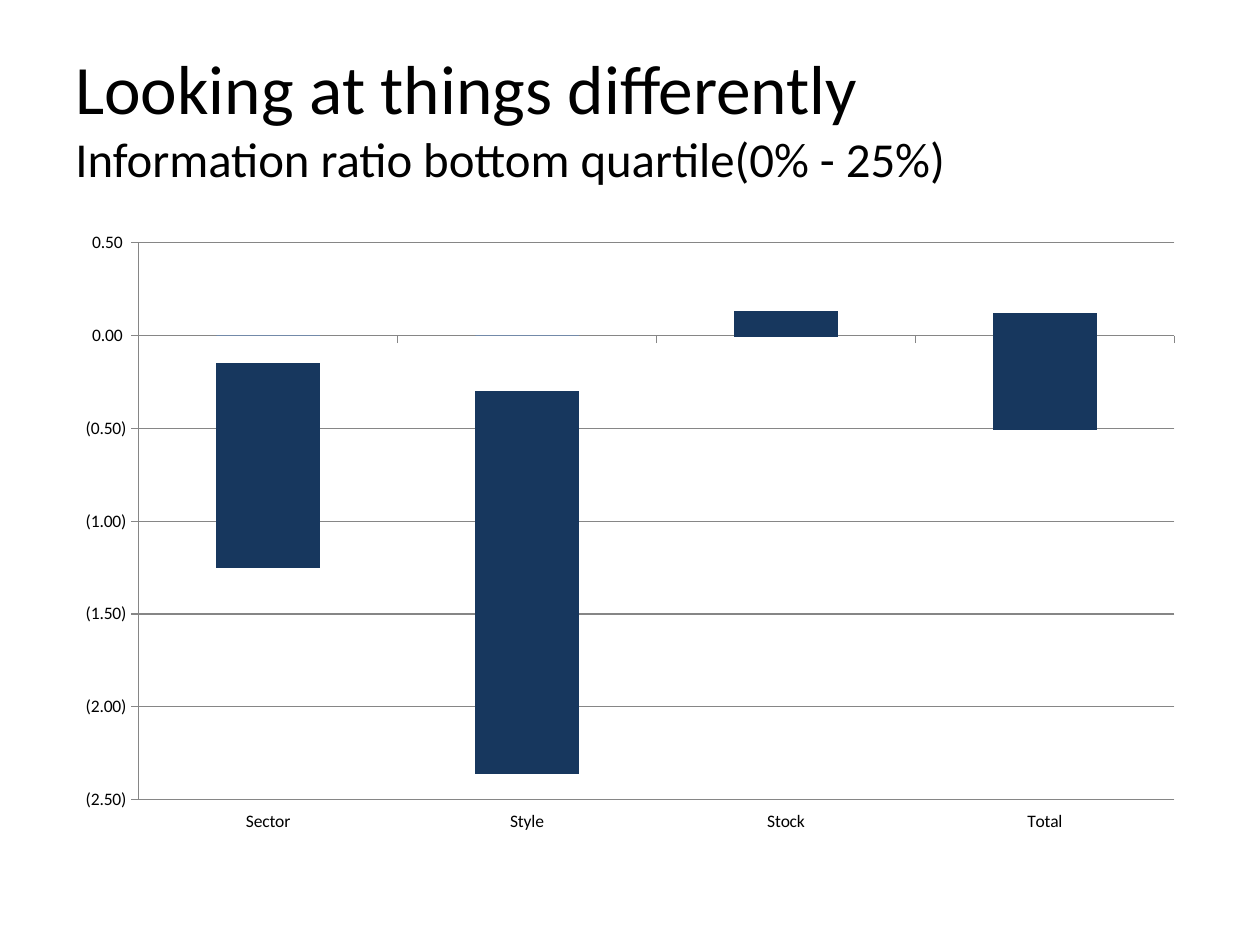
"""Build a slide with a floating column chart of information ratios."""
from dataclasses import dataclass
from typing import Optional

from pptx import Presentation
from pptx.chart.data import CategoryChartData
from pptx.dml.color import RGBColor
from pptx.enum.chart import XL_CHART_TYPE, XL_TICK_LABEL_POSITION, XL_TICK_MARK
from pptx.enum.text import MSO_ANCHOR
from pptx.util import Pt

STACKED = XL_CHART_TYPE.COLUMN_STACKED
LOW = XL_TICK_LABEL_POSITION.LOW
OUTSIDE = XL_TICK_MARK.OUTSIDE
MIDDLE = MSO_ANCHOR.MIDDLE


@dataclass(frozen=True)
class Theme:
    font: str = "Calibri"
    ink: str = "000000"
    rule: str = "868686"
    navy: str = "17375E"
    blue: str = "558ED5"
    light: str = "8EB4E3"
    pale: str = "C6D9F1"
    head: float = 39.6
    sub: float = 27.9
    label: float = 10
    line: float = 0.75


@dataclass(frozen=True)
class Band:
    color: Optional[str]
    vals: tuple = (0, 0, 0, 0)


THEME = Theme()
CATS = ("Sector", "Style", "Stock", "Total")
BANDS = (
    Band(None),
    Band(THEME.navy),
    Band(THEME.blue),
    Band(THEME.light),
    Band(THEME.navy, (0, 0, 0.13, 0.12)),
    Band(None, (-0.15, -0.3, 0, 0)),
    Band(THEME.pale),
    Band(THEME.light),
    Band(THEME.blue),
    Band(THEME.navy, (-1.1, -2.06, -0.01, -0.51)),
)


def style(font, size: float) -> None:
    font.name = THEME.font
    font.size = Pt(size)
    font.color.rgb = RGBColor.from_string(THEME.ink)


def rule(line) -> None:
    line.color.rgb = RGBColor.from_string(THEME.rule)
    line.width = Pt(THEME.line)


def add_title(slide, head: str, sub: str) -> None:
    box = slide.shapes.add_textbox(Pt(36), Pt(21.6), Pt(648), Pt(90))
    frame = box.text_frame
    frame.word_wrap = True
    frame.vertical_anchor = MIDDLE
    frame.text = f"{head}\v{sub}"
    for run, size in zip(frame.paragraphs[0].runs, (THEME.head, THEME.sub)):
        style(run.font, size)


def add_bars(slide, bands: tuple) -> None:
    data = CategoryChartData()
    data.categories = CATS
    for num, band in enumerate(bands, 1):
        data.add_series(f"Series {num}", band.vals)
    chart = slide.shapes.add_chart(
        STACKED, Pt(36), Pt(126), Pt(648), Pt(356.4), data).chart
    chart.has_legend = False
    chart.has_title = False
    style(chart.font, THEME.label)

    plot = chart.plots[0]
    plot.gap_width = 150
    plot.overlap = 100
    plot.vary_by_categories = False
    for series, band in zip(plot.series, bands):
        series.invert_if_negative = False
        fill = series.format.fill
        if band.color is None:
            fill.background()
        else:
            fill.solid()
            fill.fore_color.rgb = RGBColor.from_string(band.color)

    for axis in (chart.category_axis, chart.value_axis):
        axis.major_tick_mark = OUTSIDE
        rule(axis.format.line)
    chart.category_axis.tick_label_position = LOW

    scale = chart.value_axis
    scale.minimum_scale = -2.5
    scale.maximum_scale = 0.5
    scale.major_unit = 0.5
    scale.has_major_gridlines = True
    rule(scale.major_gridlines.format.line)
    scale.tick_labels.number_format = r"#,##0.00_);\(#,##0.00\)"
    scale.tick_labels.number_format_is_linked = False


def main() -> None:
    deck = Presentation()
    deck.slide_width, deck.slide_height = Pt(720), Pt(540)
    slide = deck.slides.add_slide(deck.slide_layouts[6])
    add_title(slide, "Looking at things differently",
              "Information ratio bottom quartile(0% - 25%)")
    add_bars(slide, BANDS)
    deck.save("out.pptx")


if __name__ == "__main__":
    main()
